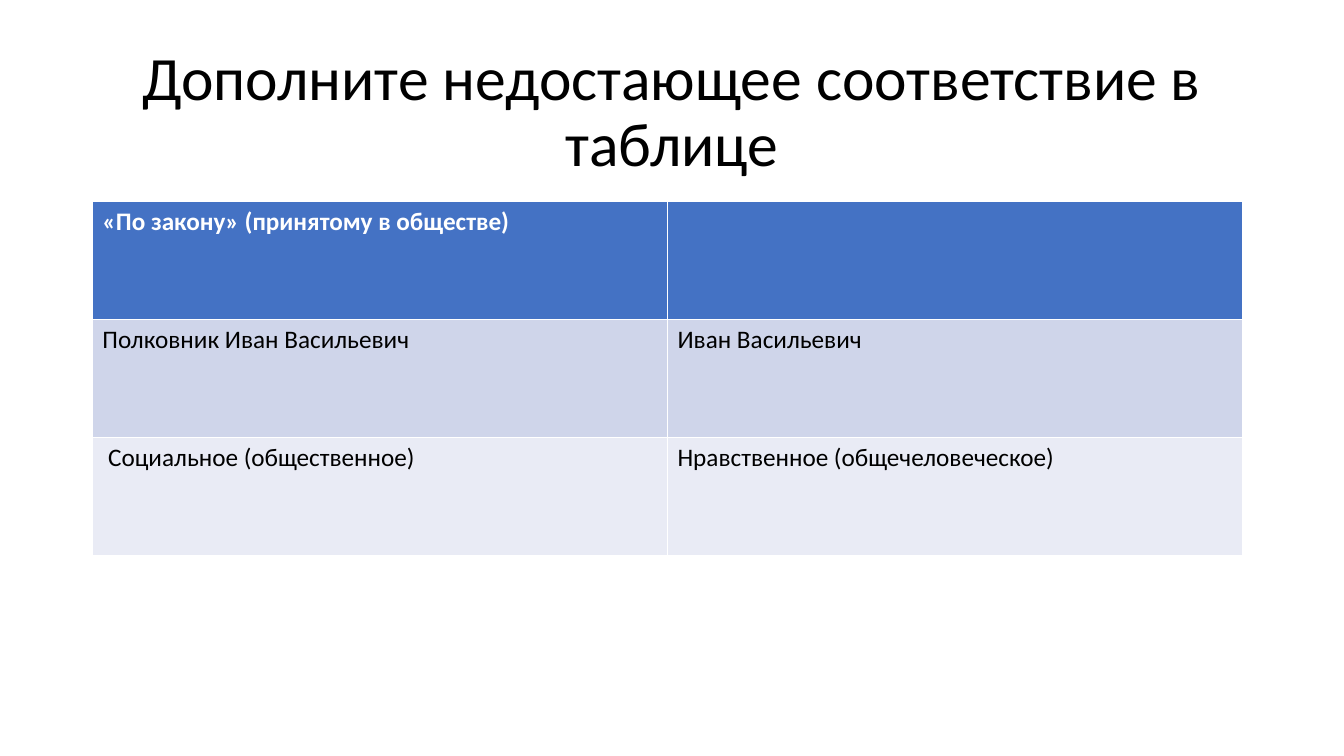
from pptx import Presentation
from pptx.dml.color import RGBColor
from pptx.enum import text as t
from pptx.util import Pt

BLACK = RGBColor(0x00, 0x00, 0x00)
WHITE = RGBColor(0xFF, 0xFF, 0xFF)
HEADER_BLUE = RGBColor(0x44, 0x72, 0xC4)
BAND_DARK = RGBColor(0xCF, 0xD5, 0xEA)
BAND_LIGHT = RGBColor(0xE9, 0xEB, 0xF5)

TITLE = "Дополните недостающее соответствие в таблице"
TITLE_FORMAT = {"name": "Calibri", "size": Pt(44), "bold": False}
HEADER_FORMAT = {"name": "Calibri", "size": Pt(18), "bold": True}
BODY_FORMAT = {**HEADER_FORMAT, "bold": False}

# Cell texts, fill, text colour and font format of each row
ROWS = [
    (("«По закону» (принятому в обществе)", ""),
     HEADER_BLUE, WHITE, HEADER_FORMAT),
    (("Полковник Иван Васильевич", "Иван Васильевич"),
     BAND_DARK, BLACK, BODY_FORMAT),
    ((" Социальное (общественное)", "Нравственное (общечеловеческое)"),
     BAND_LIGHT, BLACK, BODY_FORMAT),
]
LEFT = Pt(66)
COLUMN_WIDTH = Pt(410.8)
ROW_HEIGHT = Pt(84.4)


def write(paragraph, wording, font_format, color):
    paragraph.text = wording
    for attribute, value in font_format.items():
        setattr(paragraph.font, attribute, value)
        for run in paragraph.runs:
            setattr(run.font, attribute, value)
    for run in paragraph.runs:
        run.font.color.rgb = color


def add_title(slide):
    title = slide.shapes.add_textbox(LEFT, Pt(28.8), Pt(828), Pt(104.4))
    frame = title.text_frame
    frame.word_wrap = True
    frame.vertical_anchor = t.MSO_ANCHOR.MIDDLE
    heading = frame.paragraphs[0]
    heading.alignment = t.PP_ALIGN.CENTER
    heading.line_spacing = 0.9
    write(heading, TITLE, TITLE_FORMAT, BLACK)


def add_match_table(slide):
    """Add the two-column table; its default style draws the white borders."""
    columns = len(ROWS[0][0])
    table = slide.shapes.add_table(
        len(ROWS), columns, LEFT, Pt(144),
        COLUMN_WIDTH * columns, ROW_HEIGHT * len(ROWS)).table
    for column in table.columns:
        column.width = COLUMN_WIDTH
    for row, (wordings, fill, color, font_format) in zip(table.rows, ROWS):
        row.height = ROW_HEIGHT
        for cell, wording in zip(row.cells, wordings):
            cell.fill.solid()
            cell.fill.fore_color.rgb = fill
            write(cell.text_frame.paragraphs[0], wording, font_format, color)


def main():
    deck = Presentation()
    deck.slide_width, deck.slide_height = Pt(960), Pt(540)
    slide = deck.slides.add_slide(deck.slide_layouts[6])
    add_title(slide)
    add_match_table(slide)
    deck.save("out.pptx")


if __name__ == "__main__":
    main()
